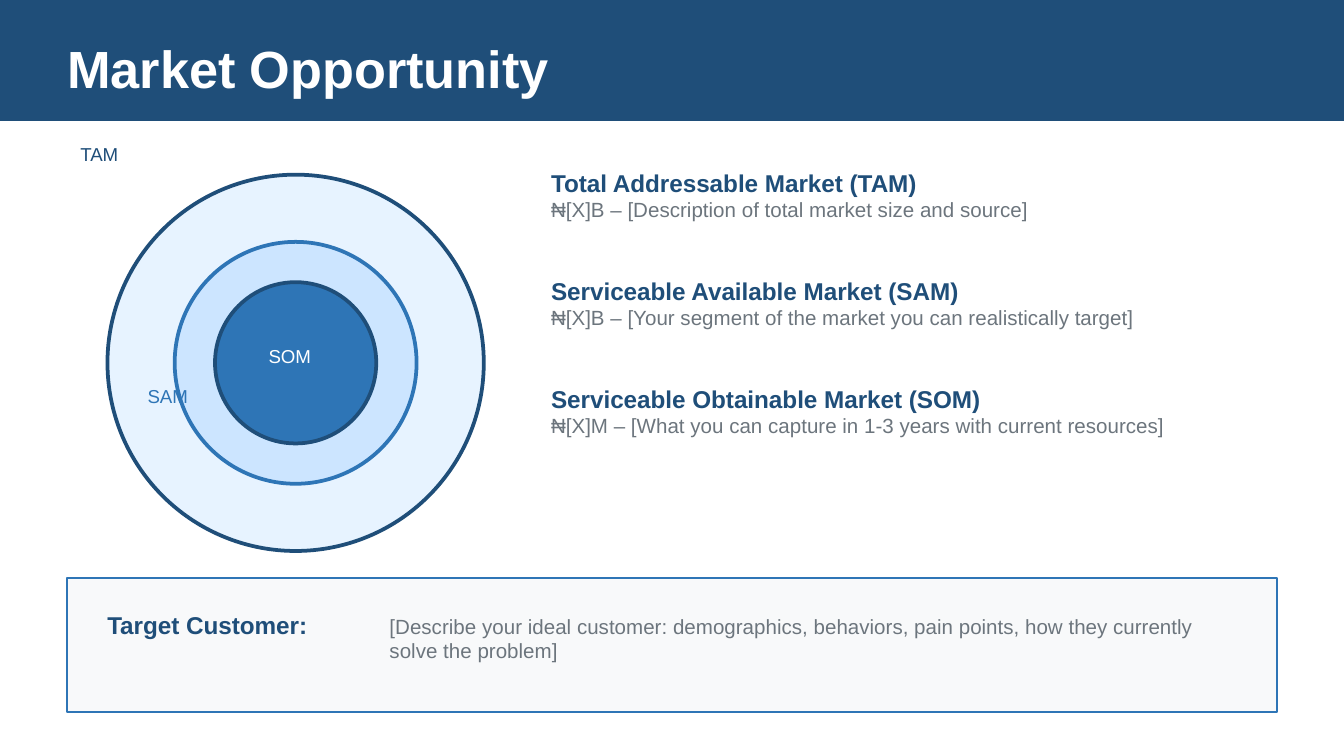
"""Build a market opportunity slide with nested market rings and a customer panel."""
from dataclasses import dataclass
from typing import NamedTuple

from lxml import etree
from pptx import Presentation
from pptx import util as u
from pptx.dml.color import RGBColor
from pptx.enum import shapes, text
from pptx.oxml.ns import qn

SCALE = 4572


@dataclass(frozen=True)
class Theme:
    font: str = "Arial"
    navy: str = "1F4E79"
    blue: str = "2E75B6"
    sky: str = "CCE5FF"
    pale: str = "E7F3FF"
    panel: str = "F8F9FA"
    grey: str = "6C757D"
    white: str = "FFFFFF"
    title: int = 28
    head: int = 13
    body: int = 11
    label: int = 10
    gap: int = 29


class Box(NamedTuple):
    left: int
    top: int
    width: int
    height: int


class Ring(NamedTuple):
    size: int
    fill: str
    line: str


class Label(NamedTuple):
    words: str
    box: Box
    size: int
    color: str
    bold: bool = False


class Market(NamedTuple):
    name: str
    detail: str


T = Theme()
OVAL = shapes.MSO_SHAPE.OVAL
RECT = shapes.MSO_SHAPE.RECTANGLE
CENTER = (440, 540)
RINGS = [
    Ring(560, T.pale, T.navy),
    Ring(360, T.sky, T.blue),
    Ring(240, T.blue, T.navy),
]
TAGS = [
    Label("TAM", Box(100, 200, 160, 60), T.label, T.navy),
    Label("SAM", Box(200, 560, 160, 60), T.label, T.blue),
    Label("SOM", Box(380, 500, 160, 60), T.label, T.white),
]
TARGET = [
    Label("Target Customer:", Box(140, 890, 440, 80), T.head, T.navy, True),
    Label("[Describe your ideal customer: demographics, behaviors, pain points, "
          "how they currently solve the problem]",
          Box(560, 890, 1300, 120), T.body, T.grey),
]
MARKETS = [
    Market("Total Addressable Market (TAM)",
           "₦[X]B – [Description of total market size and source]"),
    Market("Serviceable Available Market (SAM)",
           "₦[X]B – [Your segment of the market you can realistically target]"),
    Market("Serviceable Obtainable Market (SOM)",
           "₦[X]M – [What you can capture in 1-3 years with current resources]"),
]


def px(num: int) -> u.Emu:
    return u.Emu(num * SCALE)


def place(item, box: Box) -> None:
    item.left, item.top, item.width, item.height = map(px, box)


def style(para, size: int, color: str, bold: bool = False) -> None:
    para.alignment = text.PP_ALIGN.LEFT
    for run in para.runs:
        run.font.name = T.font
        run.font.size = u.Pt(size)
        run.font.bold = bold
        run.font.color.rgb = RGBColor.from_string(color)


def draw(slide, kind, box: Box, fill: str, line: str = "", width: int = 1):
    item = slide.shapes.add_shape(kind, *map(px, box))
    item.shadow.inherit = False
    item.fill.solid()
    item.fill.fore_color.rgb = RGBColor.from_string(fill)
    if line:
        item.line.color.rgb = RGBColor.from_string(line)
        item.line.width = u.Pt(width)
    else:
        item.line.fill.background()
    return item


def write(slide, label: Label) -> None:
    frame = slide.shapes.add_textbox(*map(px, label.box)).text_frame
    frame.word_wrap = True
    frame.vertical_anchor = text.MSO_ANCHOR.MIDDLE
    frame.text = label.words
    style(frame.paragraphs[0], label.size, label.color, label.bold)


def head(slide) -> None:
    title = slide.shapes.title
    band = draw(slide, RECT, Box(0, 0, 2000, 180), T.navy)
    title._element.addprevious(band._element)
    place(title, Box(100, 50, 1800, 100))
    frame = title.text_frame
    frame.text = "Market Opportunity"
    frame.auto_size = text.MSO_AUTO_SIZE.NONE
    frame.vertical_anchor = text.MSO_ANCHOR.MIDDLE
    frame.margin_left = frame.margin_right = 0
    frame.margin_top = frame.margin_bottom = 0
    style(frame.paragraphs[0], T.title, T.white, True)


def rings(slide) -> None:
    for ring in RINGS:
        left, top = (mid - ring.size // 2 for mid in CENTER)
        box = Box(left, top, ring.size, ring.size)
        draw(slide, OVAL, box, ring.fill, ring.line, 2)


def body(slide) -> None:
    item = slide.placeholders[1]
    place(item, Box(800, 240, 1100, 600))
    frame = item.text_frame
    frame.text = "\n".join(line for market in MARKETS for line in market)
    frame.auto_size = text.MSO_AUTO_SIZE.NONE
    frame.vertical_anchor = text.MSO_ANCHOR.TOP
    for num, para in enumerate(frame.paragraphs):
        props = para._p.get_or_add_pPr()
        props.set("marL", "0")
        props.set("indent", "0")
        etree.SubElement(props, qn("a:buNone"))
        first = num % 2 == 0
        para.space_before = u.Pt(T.gap if first and num else 0)
        if first:
            style(para, T.head, T.navy, True)
        else:
            style(para, T.body, T.grey)


def main() -> None:
    deck = Presentation()
    deck.slide_width, deck.slide_height = px(2000), px(1125)
    slide = deck.slides.add_slide(deck.slide_layouts[1])
    head(slide)
    rings(slide)
    body(slide)
    draw(slide, RECT, Box(100, 860, 1800, 200), T.panel, T.blue)
    for label in TAGS + TARGET:
        write(slide, label)
    deck.save("out.pptx")


if __name__ == "__main__":
    main()
